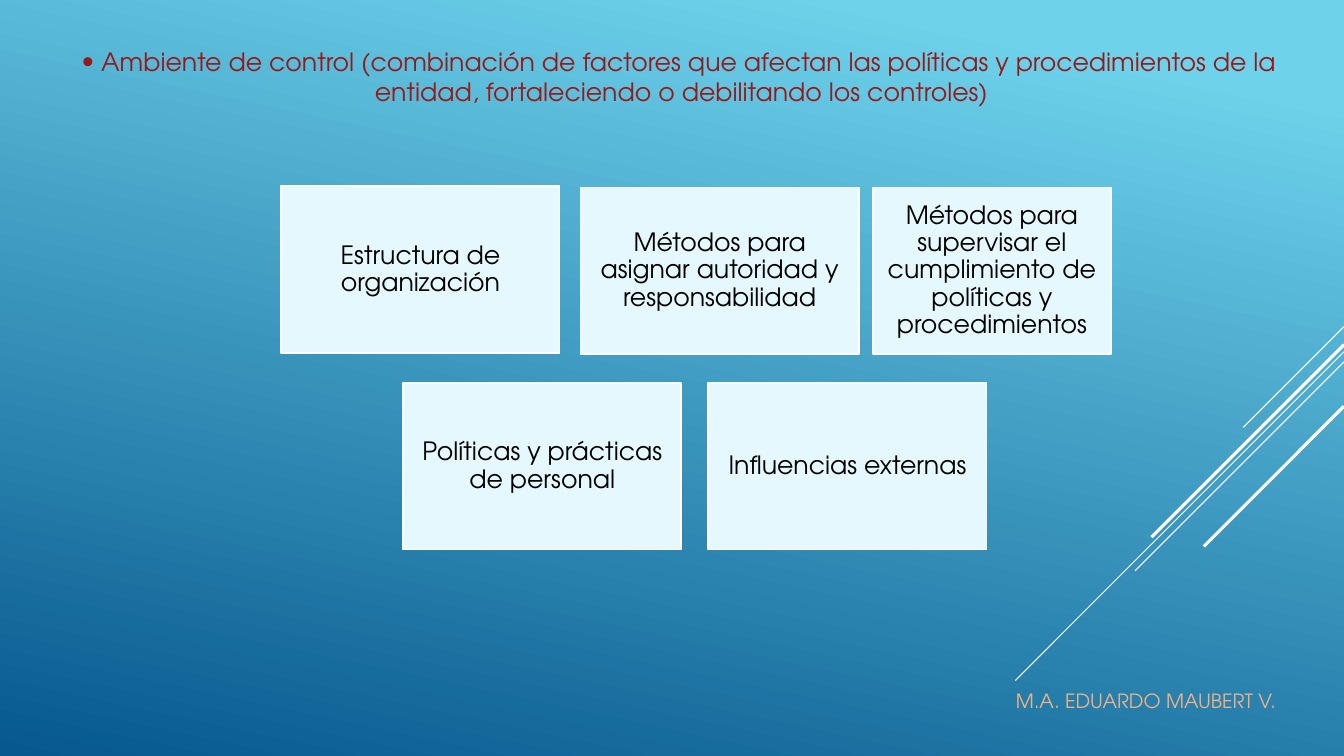
from lxml import etree
from pptx import Presentation
from pptx.dml.color import RGBColor
from pptx.enum.shapes import MSO_CONNECTOR, MSO_SHAPE
from pptx.enum.text import MSO_ANCHOR, PP_ALIGN
from pptx.oxml.ns import qn
from pptx.util import Pt

STRAIGHT = MSO_CONNECTOR.STRAIGHT
RECTANGLE = MSO_SHAPE.RECTANGLE
MIDDLE = MSO_ANCHOR.MIDDLE
CENTER = PP_ALIGN.CENTER

SKY = RGBColor(0x6E, 0xD2, 0xEB)
DEEP_BLUE = RGBColor(0x06, 0x58, 0x8E)
WHITE = RGBColor(0xFF, 0xFF, 0xFF)
BLACK = RGBColor(0x00, 0x00, 0x00)
ICE = RGBColor(0xE4, 0xF8, 0xFD)
DARK_RED = RGBColor(0x94, 0x1A, 0x1B)
PEACH = RGBColor(0xF1, 0xB1, 0x87)
FONT = "TeX Gyre Adventor"
SLIDE_WIDTH, SLIDE_HEIGHT = 960, 540


def style(paragraph, size, color):
    paragraph.font.name = FONT
    paragraph.font.size = Pt(size)
    paragraph.font.color.rgb = color


def add_text_box(left, top, width, height, lines, size, color):
    frame = slide.shapes.add_textbox(Pt(left), Pt(top), Pt(width), Pt(height)).text_frame
    frame.word_wrap = True
    frame.text = "\n".join(lines)
    for paragraph in frame.paragraphs:
        style(paragraph, size, color)
    return frame.paragraphs


prs = Presentation()
prs.slide_width, prs.slide_height = Pt(SLIDE_WIDTH), Pt(SLIDE_HEIGHT)
slide = prs.slides.add_slide(prs.slide_layouts[6])

# Background gradient, light at the top right
background = slide.background.fill
background.gradient()
background.gradient_angle = 360 - 102
for stop, position, color in zip(background.gradient_stops, (0.1, 1), (SKY, DEEP_BLUE)):
    stop.position = position
    stop.color.rgb = color

# Diagonal rays at 45 degrees from the right edge: start height, run, weight
rays = [
    (233.3, 72, 0.75),
    (251.3, 234.7, 0.75),
    (258.5, 149.2, 0.75),
    (246.2, 137.5, 2.25),
    (290.2, 100.1, 2.25),
]
for top, run, weight in rays:
    ray = slide.shapes.add_connector(
        STRAIGHT, Pt(SLIDE_WIDTH), Pt(top), Pt(SLIDE_WIDTH - run), Pt(top + run))
    ray.line.color.rgb = WHITE
    ray.line.width = Pt(weight)
    etree.SubElement(ray._element.spPr, qn("a:effectLst"))

# Heading: bulleted first line, indented second line
heading = add_text_box(51.1, 29.5, 890, 51, [
    "Ambiente de control (combinación de factores que afectan las políticas y procedimientos de la",
    "entidad, fortaleciendo o debilitando los controles)",
], 18, DARK_RED)
for paragraph, margin, hanging in zip(heading, (14, 209.5), (-14, 0)):
    properties = paragraph._p.get_or_add_pPr()
    properties.set("marL", str(Pt(margin)))
    properties.set("indent", str(Pt(hanging)))
bullet_properties = heading[0]._p.get_or_add_pPr()
bullet_font = etree.Element(qn("a:buFont"), typeface=FONT)
bullet = etree.Element(qn("a:buChar"), char="•")
bullet_properties.insert(0, bullet_font)
bullet_font.addnext(bullet)

# Factors of the control environment: left, top, width, text
factors = [
    (201, 133, 198.7, "Estructura de organización"),
    (414.7, 133.9, 198.7, "Métodos para asignar autoridad y responsabilidad"),
    (623.5, 133.9, 170, "Métodos para supervisar el cumplimiento de políticas y procedimientos"),
    (288, 273.6, 198.7, "Políticas y prácticas de personal"),
    (506, 273.6, 198.7, "Influencias externas"),
]
for left, top, width, text in factors:
    factor = slide.shapes.add_shape(RECTANGLE, Pt(left), Pt(top), Pt(width), Pt(119))
    factor.shadow.inherit = False
    factor.fill.solid()
    factor.fill.fore_color.rgb = ICE
    factor.line.color.rgb = WHITE
    factor.line.width = Pt(1.25)
    frame = factor.text_frame
    frame.word_wrap = True
    frame.vertical_anchor = MIDDLE
    frame.margin_left = frame.margin_right = Pt(5)
    frame.margin_top = frame.margin_bottom = Pt(5)
    frame.text = text
    paragraph = frame.paragraphs[0]
    paragraph.alignment = CENTER
    paragraph.line_spacing = 0.9
    paragraph.space_after = Pt(6.3)
    style(paragraph, 18, BLACK)

# Author
add_text_box(718.6, 488.2, 207.4, 24.5, ["M.A. EDUARDO MAUBERT V."], 14, PEACH)

prs.save("out.pptx")
